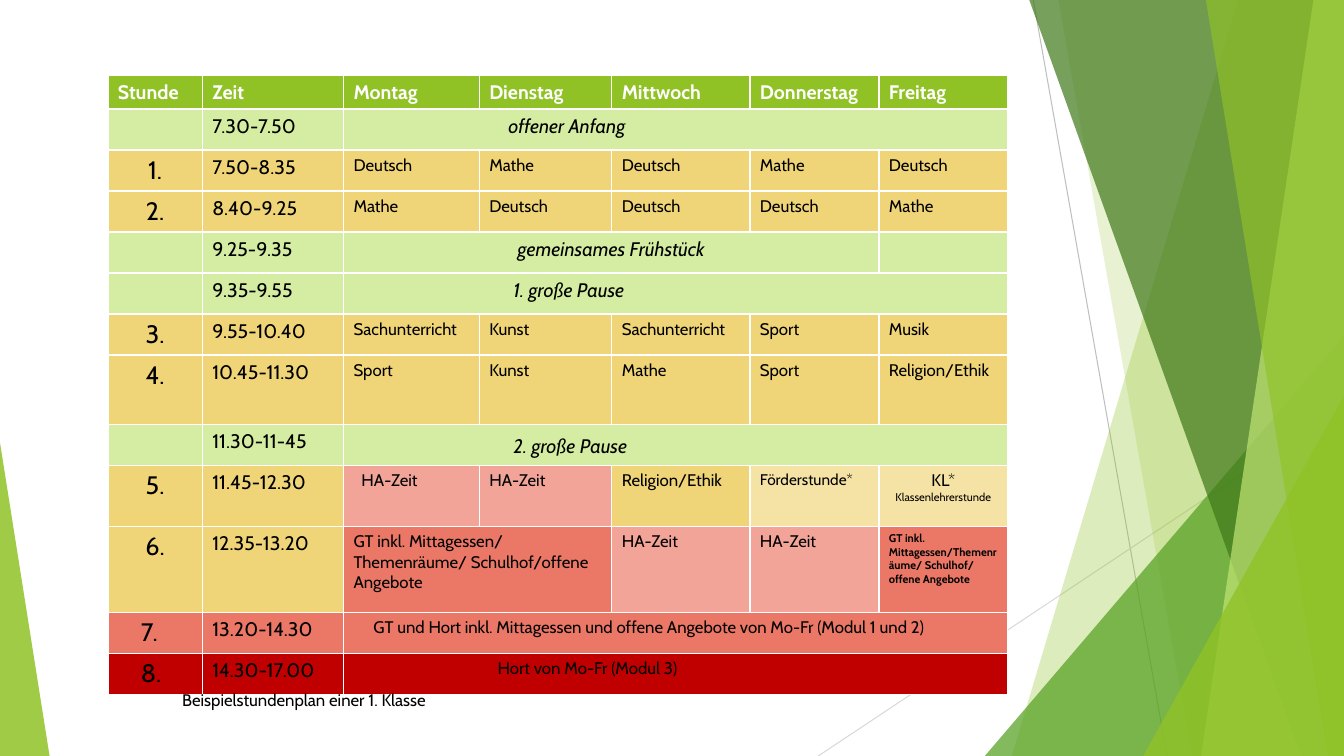
import pptx
import pptx.dml.color
import pptx.enum.shapes
import pptx.enum.text
import pptx.oxml.ns
import pptx.util
from dataclasses import dataclass
from lxml import etree

Cm, Pt = pptx.util.Cm, pptx.util.Pt
WIDTH, HEIGHT = 33.87, 19.05
FONT = "Cabin"
GREEN, LIME, SAND, CREAM = "90C226", "D5EDA2", "F0D578", "F5E3A5"
PINK, CORAL, RED = "F2A499", "EB7766", "C00000"
COLS = [2.38, 3.56, 3.42, 3.34, 3.48, 3.25, 3.25]
HEADS = ["Stunde", "Zeit", "Montag", "Dienstag", "Mittwoch", "Donnerstag", "Freitag"]
ROW = 1.03


@dataclass
class Entry:
    text: str
    fill: str = SAND
    span: int = 1
    sizes: tuple = (12,)  # one size per line of text
    indent: float = 0
    drop: float = 0
    center: bool = False
    bold: bool = False
    slant: bool = False
    color: str = "000000"


def lessons(*names):
    return [Entry(name) for name in names]


def pause(text, span=5, **style):
    return Entry(text, LIME, span, (14,), slant=True, **style)


# Each row: height, number, time, fill, entries from Monday on
ROWS = [
    (ROW, "", "7.30-7.50", LIME, [pause("offener Anfang", indent=3.9)]),
    (ROW, "1.", "7.50-8.35", SAND,
     lessons("Deutsch", "Mathe", "Deutsch", "Mathe", "Deutsch")),
    (ROW, "2.", "8.40-9.25", SAND,
     lessons("Mathe", "Deutsch", "Deutsch", "Deutsch", "Mathe")),
    (ROW, "", "9.25-9.35", LIME,
     [pause("gemeinsames Frühstück", 4, center=True), Entry("", LIME)]),
    (ROW, "", "9.35-9.55", LIME, [pause("1. große Pause", indent=4.03)]),
    (ROW, "3.", "9.55-10.40", SAND,
     lessons("Sachunterricht", "Kunst", "Sachunterricht", "Sport", "Musik")),
    (1.74, "4.", "10.45-11.30", SAND,
     lessons("Sport", "Kunst", "Mathe", "Sport", "Religion/Ethik")),
    (ROW, "", "11.30-11-45", LIME, [pause("2. große Pause", indent=4.03, drop=0.12)]),
    (1.54, "5.", "11.45-12.30", SAND,
     [Entry("HA-Zeit", PINK, indent=0.2), Entry("HA-Zeit", PINK),
      Entry("Religion/Ethik"), Entry("Förderstunde*", CREAM, sizes=(11,)),
      Entry("KL*\nKlassenlehrerstunde", CREAM, sizes=(12, 8), center=True)]),
    (2.17, "6.", "12.35-13.20", SAND,
     [Entry("GT inkl. Mittagessen/ Themenräume/ Schulhof/offene Angebote", CORAL, 2),
      Entry("HA-Zeit", PINK), Entry("HA-Zeit", PINK),
      Entry("GT inkl. Mittagessen/Themenräume/ Schulhof/ offene Angebote",
            CORAL, sizes=(8,), bold=True)]),
    (ROW, "7.", "13.20-14.30", CORAL,
     [Entry("GT und Hort inkl. Mittagessen und offene Angebote von Mo-Fr (Modul 1 und 2)",
            CORAL, 5, indent=0.5)]),
    (ROW, "8.", "14.30-17.00", RED,
     [Entry("Hort von Mo-Fr (Modul 3)", RED, 5, indent=3.63)]),
]


def rgb(code):
    return pptx.dml.color.RGBColor.from_string(code)


def paint(shape, code, alpha):
    """Fill a shape with a see-through colour, without line or shadow."""
    shape.shadow.inherit = False
    shape.line.fill.background()
    shape.fill.solid()
    shape.fill.fore_color.rgb = rgb(code)
    tone = shape.fill._xPr.find(".//" + pptx.oxml.ns.qn("a:srgbClr"))
    etree.SubElement(tone, pptx.oxml.ns.qn("a:alpha"), val=str(alpha * 1000))


def add_line(slide, start, end, code):
    line = slide.shapes.add_connector(
        pptx.enum.shapes.MSO_CONNECTOR.STRAIGHT, *map(Cm, start + end))
    line.line.color.rgb = rgb(code)
    line.line.width = Pt(0.75)
    etree.SubElement(line._element.spPr, pptx.oxml.ns.qn("a:effectLst"))


def add_facet(slide, top, foot, code, alpha):
    """Band from the given top and foot points to the right edge."""
    draw = slide.shapes.build_freeform(Cm(top), 0)
    points = [(WIDTH, 0), (WIDTH, HEIGHT), (foot, HEIGHT)]
    draw.add_line_segments([(Cm(x), Cm(y)) for x, y in points], close=True)
    paint(draw.convert_to_shape(), code, alpha)


def add_wedge(slide, left, top, width, tip, code, alpha):
    """Triangle standing on the foot of the slide."""
    wedge = slide.shapes.add_shape(
        pptx.enum.shapes.MSO_SHAPE.ISOSCELES_TRIANGLE,
        Cm(left), Cm(top), Cm(width), Cm(HEIGHT - top))
    wedge.adjustments[0] = tip
    paint(wedge, code, alpha)


def add_run(para, text, size, color="000000", bold=False, slant=False):
    run = para.add_run()
    run.text = text
    font = run.font
    font.name, font.size = FONT, Pt(size)
    font.bold, font.italic = bold, slant
    font.color.rgb = rgb(color)


def fill_cell(cell, entry):
    cell.fill.solid()
    cell.fill.fore_color.rgb = rgb(entry.fill)
    cell.margin_left = Cm(0.25 + entry.indent)
    cell.margin_top = Cm(0.13 + entry.drop)
    if not entry.text:
        return
    frame = cell.text_frame
    for i, (text, size) in enumerate(zip(entry.text.split("\n"), entry.sizes)):
        para = frame.add_paragraph() if i else frame.paragraphs[0]
        if entry.center:
            para.alignment = pptx.enum.text.PP_ALIGN.CENTER
        add_run(para, text, size, entry.color, entry.bold, entry.slant)


def fill_row(table, row, entries):
    col = 0
    for entry in entries:
        last = col + entry.span - 1
        if entry.span > 1:
            table.cell(row, col).merge(table.cell(row, last))
        fill_cell(table.cell(row, col), entry)
        col = last + 1


def add_plan(slide):
    heights = [0.84] + [row[0] for row in ROWS]
    table = slide.shapes.add_table(
        len(heights), len(COLS), Cm(2.72), Cm(1.89),
        Cm(sum(COLS)), Cm(sum(heights))).table
    for col, width in zip(table.columns, COLS):
        col.width = Cm(width)
    for row, height in zip(table.rows, heights):
        row.height = Cm(height)
    fill_row(table, 0, [Entry(head, GREEN, sizes=(14,), bold=True, color="FFFFFF")
                        for head in HEADS])
    for i, (_, number, time, fill, entries) in enumerate(ROWS, 1):
        late = fill in (CORAL, RED)
        first = Entry(number, fill, sizes=(18,), center=not late,
                      indent=0.58 if late else 0)
        fill_row(table, i, [first, Entry(time, fill, sizes=(14,))] + entries)


def add_note(slide, text):
    box = slide.shapes.add_textbox(Cm(4.34), Cm(17.25), Cm(21.41), Cm(0.71))
    box.text_frame.word_wrap = True
    add_run(box.text_frame.paragraphs[0], text, 12)


def main():
    deck = pptx.Presentation()
    deck.slide_width, deck.slide_height = Cm(WIDTH), Cm(HEIGHT)
    slide = deck.slides.add_slide(deck.slide_layouts[6])

    # Side decoration, back to front
    add_line(slide, (26.04, 0), (29.41, HEIGHT), "BFBFBF")
    add_line(slide, (WIDTH, 10.24), (20.62, HEIGHT), "D9D9D9")
    add_facet(slide, 31.2, 25.5, GREEN, 30)
    add_facet(slide, 26.67, 30.04, GREEN, 20)
    add_wedge(slide, 24.82, 8.46, 9.05, 1, "54A021", 72)
    add_facet(slide, 25.94, 32.79, "3F7819", 70)
    add_facet(slide, 33.1, 30.27, "C0E474", 70)
    add_facet(slide, 30.39, 33.47, GREEN, 65)
    add_wedge(slide, 28.81, 9.98, 5.06, 1, GREEN, 80)
    add_wedge(slide, 0, 11.15, 1.25, 0, GREEN, 85)

    # Timetable and caption
    add_plan(slide)
    add_note(slide, "Beispielstundenplan einer 1. Klasse")
    deck.save("out.pptx")


if __name__ == "__main__":
    main()
